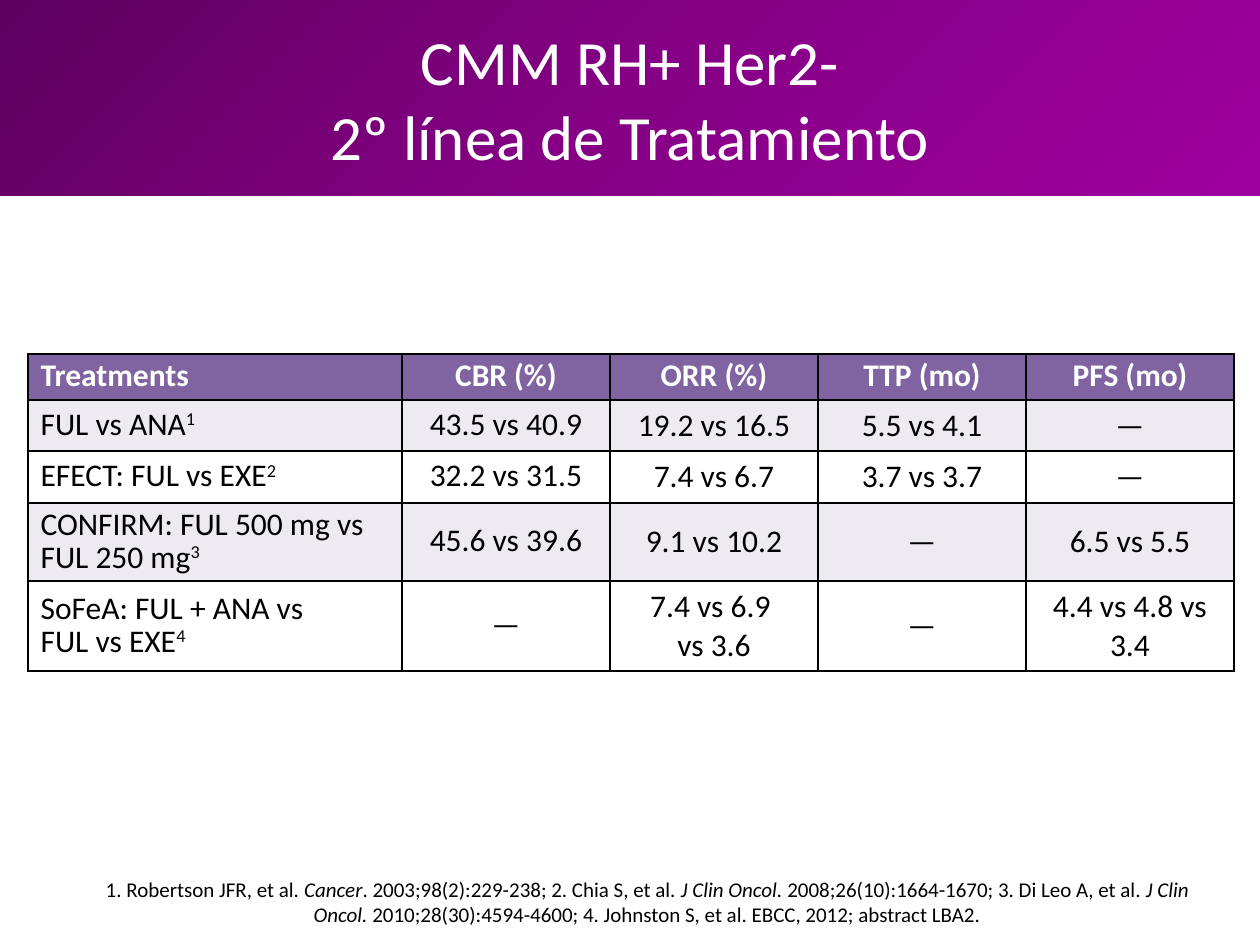
from lxml import etree
from pptx import Presentation, util as u
from pptx.dml.color import RGBColor
from pptx.enum import text as t
from pptx.oxml import ns

TITLE = "CMM RH+ Her2-\n2º línea de Tratamiento"

# ^ encloses superscript, * encloses italics
ROWS = [
    ("Treatments", "CBR (%)", "ORR (%)", "TTP (mo)", "PFS (mo)"),
    ("FUL vs ANA^1^", "43.5 vs 40.9", "19.2 vs 16.5", "5.5 vs 4.1", "—"),
    ("EFECT: FUL vs EXE^2^", "32.2 vs 31.5", "7.4 vs 6.7", "3.7 vs 3.7", "—"),
    ("CONFIRM: FUL 500 mg vs FUL 250 mg^3^", "45.6 vs 39.6", "9.1 vs 10.2", "—", "6.5 vs 5.5"),
    ("SoFeA: FUL + ANA vs \nFUL vs EXE^4^", "—", "7.4 vs 6.9 \nvs 3.6", "—", "4.4 vs 4.8 vs 3.4"),
]
REFS = ("1. Robertson JFR, et al. *Cancer*. 2003;98(2):229-238; 2. Chia S, et al. "
        "*J Clin Oncol. *2008;26(10):1664-1670; 3. Di Leo A, et al*. J Clin Oncol. *"
        "2010;28(30):4594-4600; 4. Johnston S, et al. EBCC, 2012; abstract LBA2.")

THEME = {
    "font": "Calibri", "title": 36, "cell": 18, "refs": 12,
    "ink": "000000", "light": "FFFFFF", "head": "8064A2", "band": "EDEAF0",
    "grad": [(0, "5E005E"), (50, "850085"), (100, "9E009E")],
}
WIDTHS = [374] + [208] * 4
HEIGHTS = [46, 51, 52, 78, 90]
LEFT, TOP = 28, 354
MID = t.MSO_ANCHOR.MIDDLE


def px(n):
    return u.Emu(round(n * 914400 / 126))


def place(shape, *box):
    shape.left, shape.top, shape.width, shape.height = map(px, box)


def write(frame, words, size, color="ink", bold=False, align=t.PP_ALIGN.CENTER, space=1.0):
    """Fill a text frame, reading ^ and * as marks for superscript and italics."""
    para = frame.paragraphs[0]
    para.alignment, para.line_spacing = align, space
    for i, part in enumerate(words.split("*")):
        for j, piece in enumerate(part.split("^")):
            for k, line in enumerate(piece.split("\n")):
                if k:
                    para.add_line_break()
                if not line:
                    continue
                run = para.add_run()
                run.text = line
                font = run.font
                font.name, font.size = THEME["font"], u.Pt(THEME[size])
                font.bold, font.italic = bold, i % 2 == 1
                font.color.rgb = RGBColor.from_string(THEME[color])
                if j % 2:
                    run._r.get_or_add_rPr().set("baseline", "30000")


def shade(shape):
    """Give the title its three-stop diagonal gradient."""
    shape.fill.gradient()
    shape.fill.gradient_angle = 315
    stops = shape._element.spPr.find(ns.qn("a:gradFill")).find(ns.qn("a:gsLst"))
    for stop in list(stops):
        stops.remove(stop)
    for pos, color in THEME["grad"]:
        stop = etree.SubElement(stops, ns.qn("a:gs"), pos=str(pos * 1000))
        etree.SubElement(stop, ns.qn("a:srgbClr"), val=color)


def border(cell):
    props = cell._tc.get_or_add_tcPr()
    for i, side in enumerate(("lnL", "lnR", "lnT", "lnB")):
        line = etree.Element(ns.qn("a:" + side), w=str(u.Pt(1)))
        fill = etree.SubElement(line, ns.qn("a:solidFill"))
        etree.SubElement(fill, ns.qn("a:srgbClr"), val=THEME["ink"])
        props.insert(i, line)


def add_table(slide):
    box = map(px, (LEFT, TOP, sum(WIDTHS), sum(HEIGHTS)))
    table = slide.shapes.add_table(len(ROWS), len(WIDTHS), *box).table
    for col, width in zip(table.columns, WIDTHS):
        col.width = px(width)
    for r, (row, height) in enumerate(zip(ROWS, HEIGHTS)):
        table.rows[r].height = px(height)
        back = "head" if r == 0 else "band" if r % 2 else "light"
        for c, words in enumerate(row):
            cell = table.cell(r, c)
            cell.vertical_anchor = MID
            cell.fill.solid()
            cell.fill.fore_color.rgb = RGBColor.from_string(THEME[back])
            border(cell)
            write(cell.text_frame, words, "cell",
                  color="ink" if r else "light", bold=r == 0,
                  align=t.PP_ALIGN.CENTER if c else t.PP_ALIGN.LEFT,
                  space=0.85 if r == 0 or c < 2 else 1.0)


def main():
    deck = Presentation()
    deck.slide_width, deck.slide_height = px(1260), px(945)
    slide = deck.slides.add_slide(deck.slide_layouts[5])

    title = slide.shapes.title
    place(title, 0, 0, 1260, 196)
    shade(title)
    title.text_frame.vertical_anchor = MID
    title.text_frame.auto_size = t.MSO_AUTO_SIZE.NONE
    write(title.text_frame, TITLE, "title", color="light")

    add_table(slide)

    refs = slide.shapes.add_textbox(*map(px, (69, 844, 1144, 108))).text_frame
    refs.word_wrap = True
    refs.vertical_anchor = t.MSO_ANCHOR.BOTTOM
    refs.margin_left = refs.margin_bottom = px(25)
    write(refs, REFS, "refs")

    deck.save("out.pptx")


if __name__ == "__main__":
    main()
